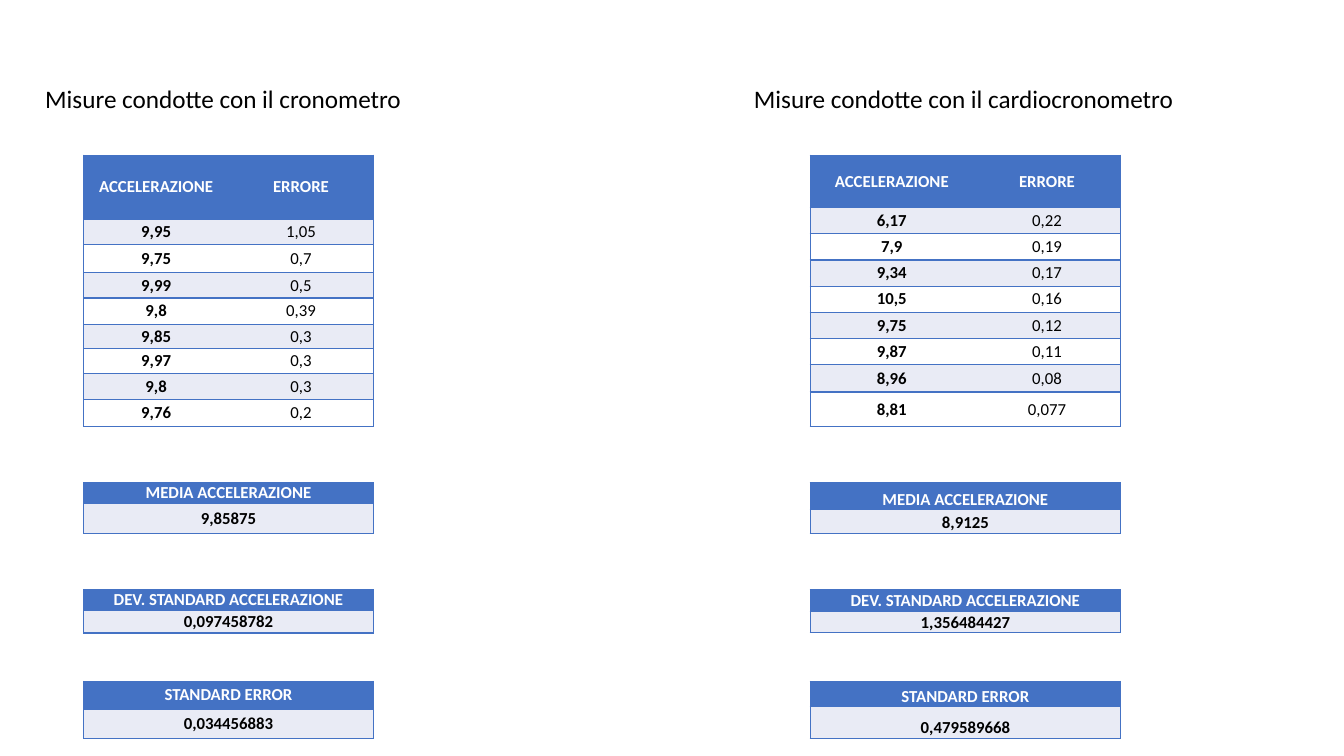
from lxml.etree import SubElement
from pptx import Presentation
from pptx.dml.color import RGBColor
from pptx.enum.text import MSO_ANCHOR, PP_ALIGN
from pptx.oxml.ns import qn
from pptx.util import Cm, Pt

COLORS = {"blue": "4472C4", "band": "E9EBF5", "white": "FFFFFF", "black": "000000"}
FONT = "Calibri"
HEADER = ("ACCELERAZIONE", "ERRORE")
SUMMARY_LABELS = ("MEDIA ACCELERAZIONE", "DEV. STANDARD ACCELERAZIONE", "STANDARD ERROR")
MEASURES_TOP = 3.91
SUMMARY_TOPS = (12.17, 14.86, 17.17)
TITLE_TOP, TITLE_HEIGHT = 1.98, 1.02

PANELS = [
    {
        "title": "Misure condotte con il cronometro",
        "title_left": 0.89, "title_width": 9.58, "wrap": True,
        "left": 2.11, "columns": (3.65, 3.65), "anchor": MSO_ANCHOR.MIDDLE,
        "measures": [("9,95", "1,05"), ("9,75", "0,7"), ("9,99", "0,5"), ("9,8", "0,39"),
                     ("9,85", "0,3"), ("9,97", "0,3"), ("9,8", "0,3"), ("9,76", "0,2")],
        "heights": (1.61, 0.65, 0.7, 0.64, 0.66, 0.62, 0.62, 0.66, 0.67),
        "summary": ("9,85875", "0,097458782", "0,034456883"),
        "summary_heights": ((0.52, 0.76), (0.52, 0.57), (0.7, 0.73)),
    },
    {
        "title": "Misure condotte con il cardiocronometro",
        "title_left": 18.75, "title_width": 11.2, "wrap": False,
        "left": 20.42, "columns": (4.11, 3.71), "anchor": MSO_ANCHOR.BOTTOM,
        "measures": [("6,17", "0,22"), ("7,9", "0,19"), ("9,34", "0,17"), ("10,5", "0,16"),
                     ("9,75", "0,12"), ("9,87", "0,11"), ("8,96", "0,08"), ("8,81", "0,077")],
        "heights": (1.32, 0.66, 0.66, 0.66, 0.66, 0.66, 0.66, 0.69, 0.87),
        "summary": ("8,9125", "1,356484427", "0,479589668"),
        "summary_heights": ((0.67, 0.6), (0.54, 0.54), (0.64, 0.79)),
    },
]


def color(name):
    return RGBColor.from_string(COLORS[name])


def format_text(frame, size, color_name, bold=False):
    for para in frame.paragraphs:
        for span in para.runs:
            span.font.name = FONT
            span.font.size = Pt(size)
            span.font.bold = bold
            span.font.color.rgb = color(color_name)


def add_borders(cell, first, last):
    properties = cell._tc.get_or_add_tcPr()
    for side, visible in (("L", first), ("R", last), ("T", True), ("B", True)):
        line = SubElement(properties, qn(f"a:ln{side}"), w=str(Pt(1)))
        if visible:
            fill = SubElement(line, qn("a:solidFill"))
            SubElement(fill, qn("a:srgbClr"), val=COLORS["blue"])
        else:
            SubElement(line, qn("a:noFill"))


def add_data_table(page, rows, left, top, widths, heights, anchor):
    frame = page.shapes.add_table(len(rows), len(widths), Cm(left), Cm(top),
                                  Cm(sum(widths)), Cm(sum(heights)))
    table = frame.table
    for column, width in zip(table.columns, widths):
        column.width = Cm(width)
    for row, height in zip(table.rows, heights):
        row.height = Cm(height)
    for r, values in enumerate(rows):
        fill_name = "blue" if r == 0 else "band" if r % 2 else "white"
        for c, value in enumerate(values):
            cell = table.cell(r, c)
            cell.text_frame.text = value
            cell.text_frame.paragraphs[0].alignment = PP_ALIGN.CENTER
            format_text(cell.text_frame, 12, "black" if r else "white", r == 0 or c == 0)
            cell.vertical_anchor = anchor
            cell.margin_left = cell.margin_right = Cm(0.12)
            cell.margin_top = cell.margin_bottom = 0
            add_borders(cell, c == 0, c == len(values) - 1)
            cell.fill.solid()
            cell.fill.fore_color.rgb = color(fill_name)


def add_panel(page, panel):
    box = page.shapes.add_textbox(Cm(panel["title_left"]), Cm(TITLE_TOP),
                                  Cm(panel["title_width"]), Cm(TITLE_HEIGHT))
    box.text_frame.word_wrap = panel["wrap"]
    box.text_frame.text = panel["title"]
    format_text(box.text_frame, 18, "black")
    add_data_table(page, [HEADER, *panel["measures"]], panel["left"], MEASURES_TOP,
                   panel["columns"], panel["heights"], MSO_ANCHOR.MIDDLE)
    for label, value, top, heights in zip(SUMMARY_LABELS, panel["summary"],
                                          SUMMARY_TOPS, panel["summary_heights"]):
        add_data_table(page, [(label,), (value,)], panel["left"], top,
                       (sum(panel["columns"]),), heights, panel["anchor"])


def main():
    deck = Presentation()
    deck.slide_width, deck.slide_height = Cm(33.87), Cm(19.05)
    page = deck.slides.add_slide(deck.slide_layouts[6])
    for panel in PANELS:
        add_panel(page, panel)
    deck.save("out.pptx")


if __name__ == "__main__":
    main()
